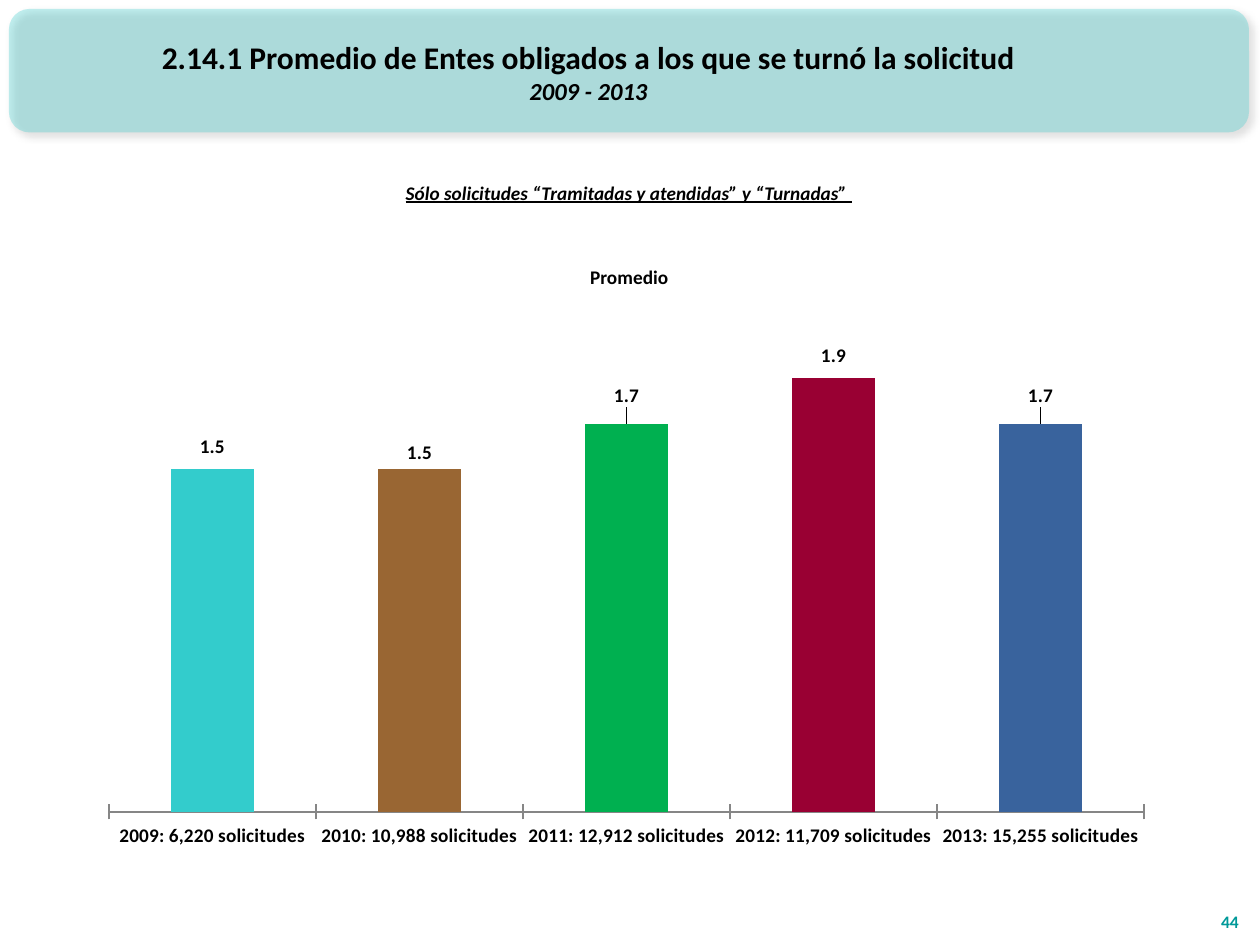
"""Build the slide on the average number of public bodies per request."""
from lxml import etree
from pptx import Presentation
from pptx import util as u
from pptx.chart.data import CategoryChartData
from pptx.dml.color import RGBColor
from pptx.enum import chart as ch
from pptx.enum import shapes, text
from pptx.oxml import parse_xml
from pptx.oxml.ns import nsdecls, qn

FONT = "Calibri"
BLACK = RGBColor(0x00, 0x00, 0x00)
TEAL = RGBColor(0x00, 0x99, 0x99)
TURQUOISE = RGBColor(0x33, 0xCC, 0xCC)
AXIS_GRAY = RGBColor(0x86, 0x86, 0x86)
BARS = [
    ("2009: 6,220 solicitudes", 1.5, TURQUOISE, -0.01),
    ("2010: 10,988 solicitudes", 1.5, RGBColor(0x99, 0x66, 0x33), 0),
    ("2011: 12,912 solicitudes", 1.7, RGBColor(0x00, 0xB0, 0x50), -0.02),
    ("2012: 11,709 solicitudes", 1.9, RGBColor(0x99, 0x00, 0x33), -0.01),
    ("2013: 15,255 solicitudes", 1.7, RGBColor(0x39, 0x63, 0x9D), -0.02),
]
PLOT_LAYOUT = {"layoutTarget": "inner", "xMode": "edge", "yMode": "edge",
               "x": 0.02, "y": 0, "w": 0.96, "h": 0.92}


def add_run(p, words, size, color=BLACK, italic=False, underline=False):
    """Add one bold run to a paragraph."""
    r = p.add_run()
    r.text = words
    font = r.font
    font.name, font.size, font.bold = FONT, u.Pt(size), True
    font.italic, font.underline = italic, underline
    font.color.rgb = color


def add_label(s, box, words, size, align=text.PP_ALIGN.CENTER,
              anchor=text.MSO_ANCHOR.TOP, **style):
    """Add a one-line text box."""
    tf = s.shapes.add_textbox(*map(u.Cm, box)).text_frame
    tf.word_wrap = True
    tf.vertical_anchor = anchor
    p = tf.paragraphs[0]
    p.alignment = align
    add_run(p, words, size, **style)


def add_banner(s):
    """Add the translucent rounded title band with its soft shadow."""
    sp = s.shapes.add_shape(shapes.MSO_SHAPE.ROUNDED_RECTANGLE,
                            u.Cm(0.18), u.Cm(0.18), u.Cm(25), u.Cm(2.49))
    sp.fill.solid()
    sp.fill.fore_color.rgb = TURQUOISE
    color = sp._element.spPr.find(qn("a:solidFill"))[0]
    etree.SubElement(color, qn("a:alpha")).set("val", "30000")
    sp.line.fill.background()
    sp._element.spPr.append(parse_xml(
        f'<a:effectLst {nsdecls("a")}><a:outerShdw blurRad="50800" dist="38100" '
        'dir="2700000" algn="tl" rotWithShape="0"><a:srgbClr val="000000">'
        '<a:alpha val="40000"/></a:srgbClr></a:outerShdw></a:effectLst>'))


def set_title(s):
    """Place the title over the banner and write its two lines."""
    sp = s.shapes.title
    s.shapes._spTree.append(sp._element)
    sp.left, sp.top, sp.width, sp.height = map(u.Cm, (0.22, 0.25, 23.29, 2.39))
    tf = sp.text_frame
    tf.auto_size = text.MSO_AUTO_SIZE.NONE
    tf.vertical_anchor = text.MSO_ANCHOR.MIDDLE
    p = tf.paragraphs[0]
    add_run(p, "2.14.1 Promedio de Entes obligados a los que se turnó la solicitud", 18)
    subtitle = tf.add_paragraph()
    add_run(subtitle, "2009 - 2013", 14, italic=True)
    for line in (p, subtitle):
        line.alignment = text.PP_ALIGN.CENTER
        line.space_before = u.Pt(0)


def set_layout(parent, position, settings):
    """Give a chart part a manual layout as its child at the given position."""
    for old in parent.findall(qn("c:layout")):
        parent.remove(old)
    layout = etree.Element(qn("c:layout"))
    manual = etree.SubElement(layout, qn("c:manualLayout"))
    for tag, value in settings.items():
        etree.SubElement(manual, qn(f"c:{tag}")).set("val", str(value))
    parent.insert(position, layout)


def add_average_chart(s):
    """Add the column chart with one colour per year."""
    names, values, colors, shifts = zip(*BARS)
    data = CategoryChartData(number_format="0.0")
    data.categories = names
    data.add_series("Promedio", values)
    chart = s.shapes.add_chart(ch.XL_CHART_TYPE.COLUMN_CLUSTERED, u.Cm(1.76), u.Cm(5.78),
                               u.Cm(21.74), u.Cm(11.51), data).chart
    chart.has_legend = chart.has_title = False
    font = chart.font
    font.name, font.size, font.bold = FONT, u.Pt(11), True
    font.color.rgb = BLACK

    axis = chart.category_axis
    axis.major_tick_mark = ch.XL_TICK_MARK.CROSS
    axis.format.line.color.rgb = AXIS_GRAY
    scale = chart.value_axis
    scale.minimum_scale, scale.maximum_scale, scale.major_unit = 0, 2.3, 1
    scale.has_major_gridlines = scale.visible = False

    plot = chart.plots[0]
    plot.gap_width, plot.vary_by_categories = 150, False
    series = plot.series[0]
    labels = series.data_labels
    labels.show_value = True
    labels.number_format, labels.number_format_is_linked = "0.0", False
    labels.position = ch.XL_LABEL_POSITION.OUTSIDE_END
    for i, (color, shift) in enumerate(zip(colors, shifts)):
        point = series.points[i]
        point.format.fill.solid()
        point.format.fill.fore_color.rgb = color
        label = point.data_label
        label.position = ch.XL_LABEL_POSITION.OUTSIDE_END
        set_layout(label._get_or_add_dLbl(), 1, {"x": 0, "y": shift})
    set_layout(chart._chartSpace.chart.plotArea, 0, PLOT_LAYOUT)


def main():
    """Build and save the slide."""
    prs = Presentation()
    prs.slide_width, prs.slide_height = u.Cm(25.4), u.Cm(19.05)
    s = prs.slides.add_slide(prs.slide_layouts[5])
    add_banner(s)
    set_title(s)
    add_label(s, (24.2, 17.9, 1.02, 1.02), "44", 10, text.PP_ALIGN.RIGHT,
              text.MSO_ANCHOR.BOTTOM, color=TEAL)
    add_label(s, (5.86, 3.53, 13.64, 0.74),
              "Sólo solicitudes “Tramitadas y atendidas” y “Turnadas” ", 11,
              italic=True, underline=True)
    add_average_chart(s)
    add_label(s, (9.61, 5.22, 6.15, 0.74), "Promedio", 11)
    prs.save("out.pptx")


if __name__ == "__main__":
    main()
